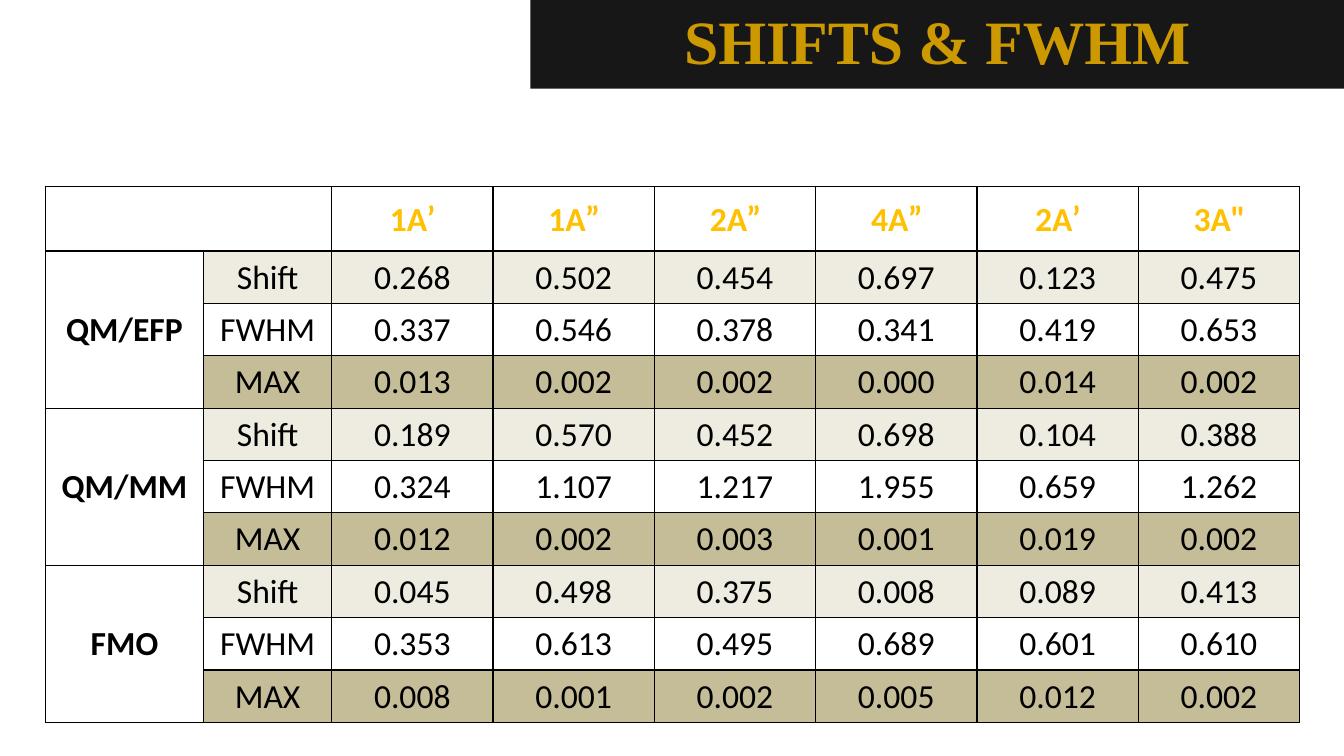
from lxml.etree import SubElement
from pptx import Presentation
from pptx.dml.color import RGBColor
from pptx.enum.text import MSO_ANCHOR, PP_ALIGN
from pptx.oxml import parse_xml
from pptx.oxml.ns import nsdecls, qn
from pptx.util import Inches, Pt

# Content
TITLE = "SHIFTS & FWHM"
STATES = [("1A", "’"), ("1A", "”"), ("2A", "”"), ("4A", "”"), ("2A", "’"), ("3A", '"')]
MEASURES = ["Shift", "FWHM", "MAX"]
METHODS = {
    "QM/EFP": [
        "0.268 0.502 0.454 0.697 0.123 0.475",
        "0.337 0.546 0.378 0.341 0.419 0.653",
        "0.013 0.002 0.002 0.000 0.014 0.002",
    ],
    "QM/MM": [
        "0.189 0.570 0.452 0.698 0.104 0.388",
        "0.324 1.107 1.217 1.955 0.659 1.262",
        "0.012 0.002 0.003 0.001 0.019 0.002",
    ],
    "FMO": [
        "0.045 0.498 0.375 0.008 0.089 0.413",
        "0.353 0.613 0.495 0.689 0.601 0.610",
        "0.008 0.001 0.002 0.005 0.012 0.002",
    ],
}

# Theme and layout, lengths in inches
THEME = {
    "title_font": "Times New Roman", "title_size": 44, "title": "CC9900", "band": "181717",
    "font": "Calibri", "prime_font": "Lato", "size": 24, "text": "000000",
    "header": "FFC000", "plain": "FFFFFF", "border": "000000",
    "measure_fills": ["EEECE1", "FFFFFF", "C4BD97"],
}
SLIDE_SIZE = (13.33, 7.5)
TITLE_BOX = {"left": 5.26, "top": 0, "width": 8.08, "height": 0.88}
TABLE_LEFT, TABLE_TOP = 0.45, 1.85
COLUMNS = [1.57, 1.27] + [1.6] * len(STATES)
ROWS = [0.64] + [0.52] * (len(METHODS) * len(MEASURES))
CELL_FORMAT = {
    "margin_left": Inches(0.01), "margin_right": Inches(0.01),
    "margin_top": Inches(0.01), "margin_bottom": 0,
    "vertical_anchor": MSO_ANCHOR.MIDDLE,
}


def add_run(paragraph, text, font, size, color, bold=False):
    run = paragraph.add_run()
    run.text = text
    for name, value in {"name": font, "size": Pt(size), "bold": bold}.items():
        setattr(run.font, name, value)
    run.font.color.rgb = RGBColor.from_string(color)
    return run


def outline(run):
    run.font._element.insert(0, parse_xml(
        f'<a:ln {nsdecls("a")} w="9525"><a:solidFill>'
        f'<a:srgbClr val="{THEME["band"]}"/></a:solidFill></a:ln>'))


def style_cell(cell, fill):
    for name, value in CELL_FORMAT.items():
        setattr(cell, name, value)
    properties = cell._tc.get_or_add_tcPr()
    for side in ("lnL", "lnR", "lnT", "lnB"):
        line = SubElement(properties, qn(f"a:{side}"), w=str(Pt(1)))
        solid = SubElement(line, qn("a:solidFill"))
        SubElement(solid, qn("a:srgbClr"), val=THEME["border"])
    cell.fill.solid()
    cell.fill.fore_color.rgb = RGBColor.from_string(fill)
    cell.text_frame.paragraphs[0].alignment = PP_ALIGN.CENTER


def write_cell(cell, text, bold=False):
    add_run(cell.text_frame.paragraphs[0], text, THEME["font"], THEME["size"], THEME["text"], bold)


def add_title(slide):
    title = slide.shapes.title
    for name, value in TITLE_BOX.items():
        setattr(title, name, Inches(value))
    title.fill.solid()
    title.fill.fore_color.rgb = RGBColor.from_string(THEME["band"])
    title.text_frame.vertical_anchor = MSO_ANCHOR.MIDDLE
    paragraph = title.text_frame.paragraphs[0]
    paragraph.alignment, paragraph.line_spacing = PP_ALIGN.CENTER, 0.9
    add_run(paragraph, TITLE, THEME["title_font"], THEME["title_size"], THEME["title"], True)


def add_results(slide):
    frame = slide.shapes.add_table(
        len(ROWS), len(COLUMNS), Inches(TABLE_LEFT), Inches(TABLE_TOP),
        Inches(sum(COLUMNS)), Inches(sum(ROWS)))
    table = frame.table
    table.first_row = table.horz_banding = False
    for column, width in zip(table.columns, COLUMNS):
        column.width = Inches(width)
    for row, height in zip(table.rows, ROWS):
        row.height = Inches(height)

    # Fills and borders: each measure has its own band
    for r in range(len(ROWS)):
        for c in range(len(COLUMNS)):
            banded = r > 0 and c > 0
            fill = THEME["measure_fills"][(r - 1) % len(MEASURES)] if banded else THEME["plain"]
            style_cell(table.cell(r, c), fill)

    # Header row
    table.cell(0, 0).merge(table.cell(0, 1))
    for c, (state, prime) in enumerate(STATES, start=2):
        paragraph = table.cell(0, c).text_frame.paragraphs[0]
        for text, font in ((state, THEME["font"]), (prime, THEME["prime_font"])):
            outline(add_run(paragraph, text, font, THEME["size"], THEME["header"], True))

    # One block of rows per method
    for block, (method, lines) in enumerate(METHODS.items()):
        first = 1 + block * len(MEASURES)
        table.cell(first, 0).merge(table.cell(first + len(MEASURES) - 1, 0))
        write_cell(table.cell(first, 0), method, bold=True)
        for r, (measure, values) in enumerate(zip(MEASURES, lines), start=first):
            for c, text in enumerate([measure, *values.split()], start=1):
                write_cell(table.cell(r, c), text)


def main():
    presentation = Presentation()
    presentation.slide_width, presentation.slide_height = map(Inches, SLIDE_SIZE)
    slide = presentation.slides.add_slide(presentation.slide_layouts.get_by_name("Title Only"))
    add_results(slide)
    add_title(slide)
    presentation.save("out.pptx")


if __name__ == "__main__":
    main()
